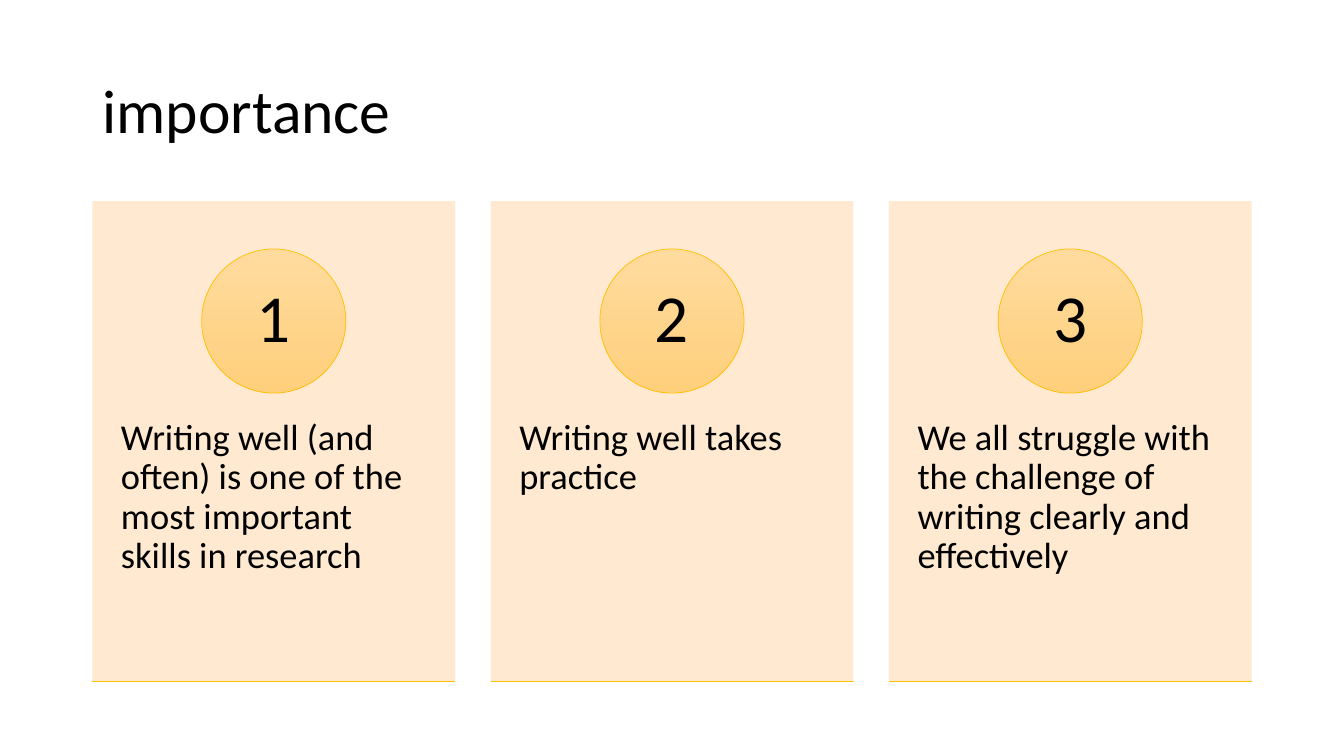
from lxml import etree
from pptx import Presentation
from pptx.dml.color import RGBColor
from pptx.enum.shapes import MSO_SHAPE as Shape
from pptx.enum.text import MSO_ANCHOR as Anchor, PP_ALIGN as Align
from pptx.oxml.ns import qn
from pptx.util import Emu, Pt

PX = 9144  # 100 px to the inch
FONT = "Calibri"
BLACK, CREAM, GOLD = "000000", "FFE8CC", "FFC000"
FADE = ("FFDB9E", "FFD07C")

# Card grid
LEFT, TOP, WIDE, HIGH, STEP = 92, 200, 359, 476, 395
DISC, LABEL = 143, 101
CARDS = [
    "Writing well (and often) is one of the most important skills in research",
    "Writing well takes practice",
    "We all struggle with the challenge of writing clearly and effectively",
]


def px(*vals):
    return [Emu(v * PX) for v in vals]


def paint(color, code, alpha=None):
    color.rgb = RGBColor.from_string(code)
    return alpha


def fade(fill):
    fill.gradient()
    fill.gradient_angle = 270
    for stop, code in zip(fill.gradient_stops, FADE):
        paint(stop.color, code)


def sheer(shape, alpha):
    for node in shape.element.spPr.iter(qn("a:srgbClr")):
        etree.SubElement(node, qn("a:alpha")).set("val", str(alpha * 1000))


def block(slide, kind, box, edge, fill=None):
    """Add a preset shape, with a gradient when no plain fill is given."""
    shape = slide.shapes.add_shape(kind, *px(*box))
    shape.shadow.inherit = False
    if fill:
        shape.fill.solid()
        paint(shape.fill.fore_color, fill)
    else:
        fade(shape.fill)
    paint(shape.line.color, edge)
    shape.line.width = Pt(0.5)
    return shape


def write(slide, text, box, size, align=Align.LEFT, anchor=Anchor.TOP,
          inset=(10, 5)):
    frame = slide.shapes.add_textbox(*px(*box)).text_frame
    frame.word_wrap = True
    frame.vertical_anchor = anchor
    frame.margin_left = frame.margin_right = Emu(inset[0] * PX)
    frame.margin_top = frame.margin_bottom = Emu(inset[1] * PX)
    para = frame.paragraphs[0]
    para.alignment = align
    para.line_spacing = 0.9
    run = para.add_run()
    run.text = text
    run.font.name = FONT
    run.font.size = Pt(size)
    paint(run.font.color, BLACK)


def card(slide, num, text):
    left = LEFT + (num - 1) * STEP
    # Panel and its text
    panel = block(slide, Shape.RECTANGLE, (left, TOP, WIDE, HIGH), CREAM, CREAM)
    sheer(panel, 90)
    write(slide, text, (left, 380, WIDE, 286), 26, inset=(28, 36))
    # Numbered disc
    x = left + (WIDE - DISC) // 2
    block(slide, Shape.OVAL, (x, 247, DISC, DISC), GOLD)
    gap = (DISC - LABEL) // 2
    write(slide, str(num), (x + gap, 247 + gap, LABEL, LABEL), 48,
          align=Align.CENTER, anchor=Anchor.MIDDLE, inset=(11, 1))
    # Base rule
    block(slide, Shape.RECTANGLE, (left, TOP + HIGH, WIDE, 0), GOLD)


def main():
    deck = Presentation()
    deck.slide_width, deck.slide_height = px(1333, 750)
    slide = deck.slides.add_slide(deck.slide_layouts[6])
    write(slide, "importance", (92, 40, 1150, 145), 44, anchor=Anchor.MIDDLE)
    for num, text in enumerate(CARDS, 1):
        card(slide, num, text)
    deck.save("out.pptx")


if __name__ == "__main__":
    main()
